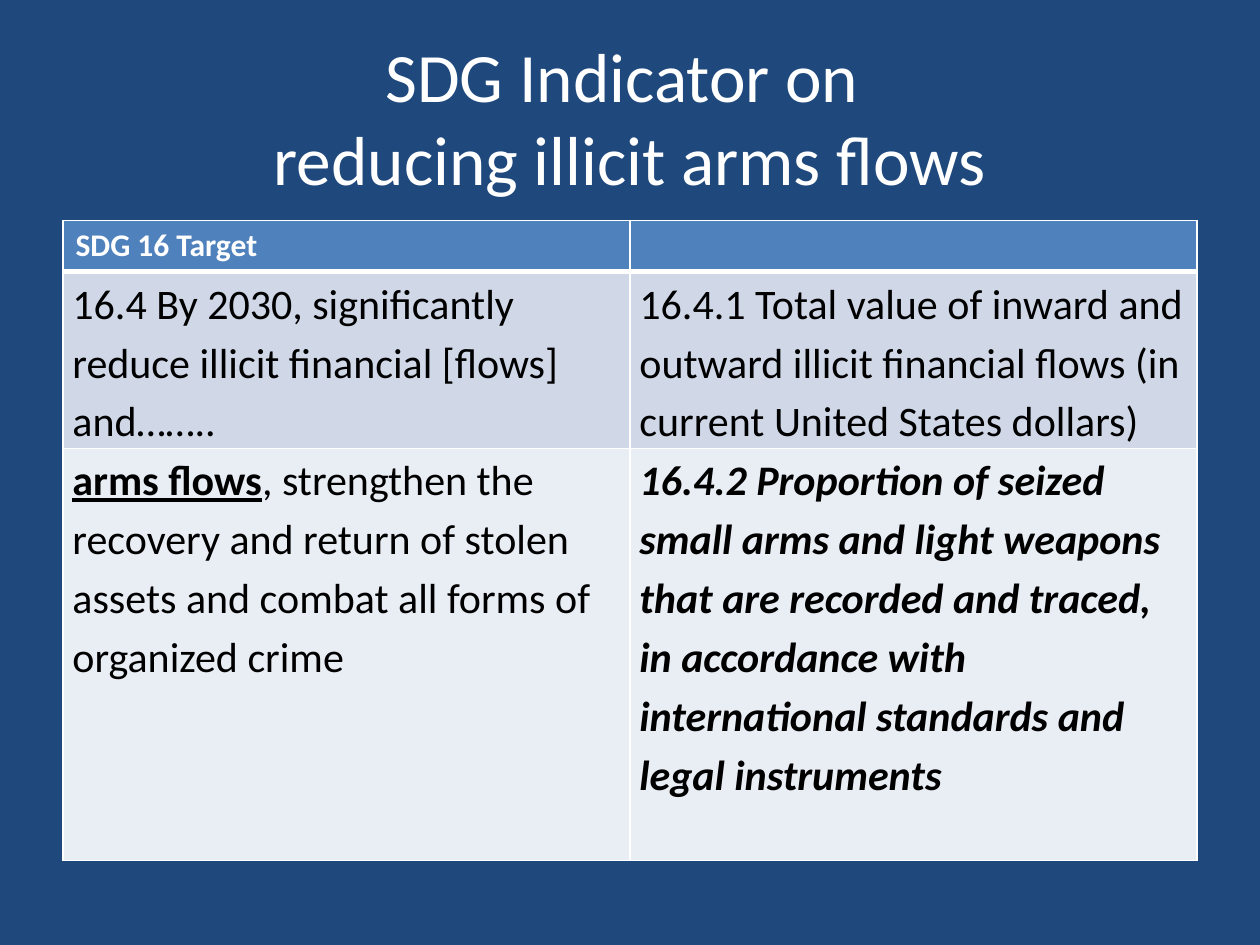
from lxml.etree import SubElement as Sub
from pptx import Presentation
from pptx.dml.color import RGBColor
from pptx.enum.text import MSO_ANCHOR as Anchor, PP_ALIGN as Align
from pptx.oxml.ns import qn
from pptx.util import Pt

NAVY = RGBColor(0x1F, 0x49, 0x7D)
BLUE = RGBColor(0x4F, 0x81, 0xBD)
MIST = RGBColor(0xD0, 0xD8, 0xE8)
PALE = RGBColor(0xE9, 0xED, 0xF4)
WHITE = RGBColor(0xFF, 0xFF, 0xFF)
BLACK = RGBColor(0, 0, 0)
FONT = "Calibri"

ROWS = [
    (29.2, BLUE, [[("SDG 16 Target", "b")], []]),
    (101, MIST, [
        [("16.4 By 2030, significantly reduce illicit financial [flows] and……..", "")],
        [("16.4.1 Total value of inward and outward illicit financial flows "
          "(in current United States dollars)", "")],
    ]),
    (235.6, PALE, [
        [("arms flows", "bu"),
         (", strengthen the recovery and return of stolen assets and combat "
          "all forms of organized crime", "")],
        [("16.4.2 Proportion of seized small arms and light weapons that are "
          "recorded and traced, in accordance with international standards "
          "and legal instruments", "bi")],
    ]),
]


def style(font, size, color, marks=""):
    font.name, font.size = FONT, Pt(size)
    font.color.rgb = color
    font.bold = "b" in marks
    font.italic = "i" in marks
    font.underline = "u" in marks


def add_title(slide, left, top, width, height):
    box = slide.shapes.add_textbox(Pt(left), Pt(top), Pt(width), Pt(height))
    frame = box.text_frame
    frame.word_wrap = True
    frame.vertical_anchor = Anchor.MIDDLE
    frame.text = "SDG Indicator on \vreducing illicit arms flows"
    para = frame.paragraphs[0]
    para.alignment = Align.CENTER
    for run in para.runs:
        style(run.font, 39.6, WHITE)


def set_edges(cell, widths):
    props = cell._tc.get_or_add_tcPr()
    for spot, (side, width) in enumerate(widths.items()):
        line = Sub(props, qn(f"a:ln{side}"), w=str(Pt(width)))
        fill = Sub(line, qn("a:solidFill"))
        Sub(fill, qn("a:srgbClr"), val=str(WHITE))
        props.insert(spot, line)


def fill_cell(cell, parts, fill, head, under):
    cell.fill.solid()
    cell.fill.fore_color.rgb = fill
    set_edges(cell, {"L": 1, "R": 1, "T": 3 if under else 1, "B": 3 if head else 1})
    para = cell.text_frame.paragraphs[0]
    if not head:
        cell.margin_left = cell.margin_right = Pt(5.4)
        cell.margin_top = cell.margin_bottom = 0
        para.line_spacing = 1.15
    for text, marks in parts:
        run = para.add_run()
        run.text = text
        style(run.font, 18 if head else 24, WHITE if head else BLACK, marks)


def add_grid(slide, left, top, width):
    total = sum(row[0] for row in ROWS)
    table = slide.shapes.add_table(
        len(ROWS), 2, Pt(left), Pt(top), Pt(width), Pt(total)).table
    table.horz_banding = False
    for col in table.columns:
        col.width = Pt(width / 2)
    for r, (height, fill, cells) in enumerate(ROWS):
        table.rows[r].height = Pt(height)
        for c, parts in enumerate(cells):
            fill_cell(table.cell(r, c), parts, fill, r == 0, r == 1)


def main():
    deck = Presentation()
    deck.slide_width, deck.slide_height = Pt(720), Pt(540)
    slide = deck.slides.add_slide(deck.slide_layouts[6])
    slide.background.fill.solid()
    slide.background.fill.fore_color.rgb = NAVY
    add_title(slide, 36, 21.6, 648, 90)
    add_grid(slide, 36, 126, 648)
    deck.save("out.pptx")


if __name__ == "__main__":
    main()
